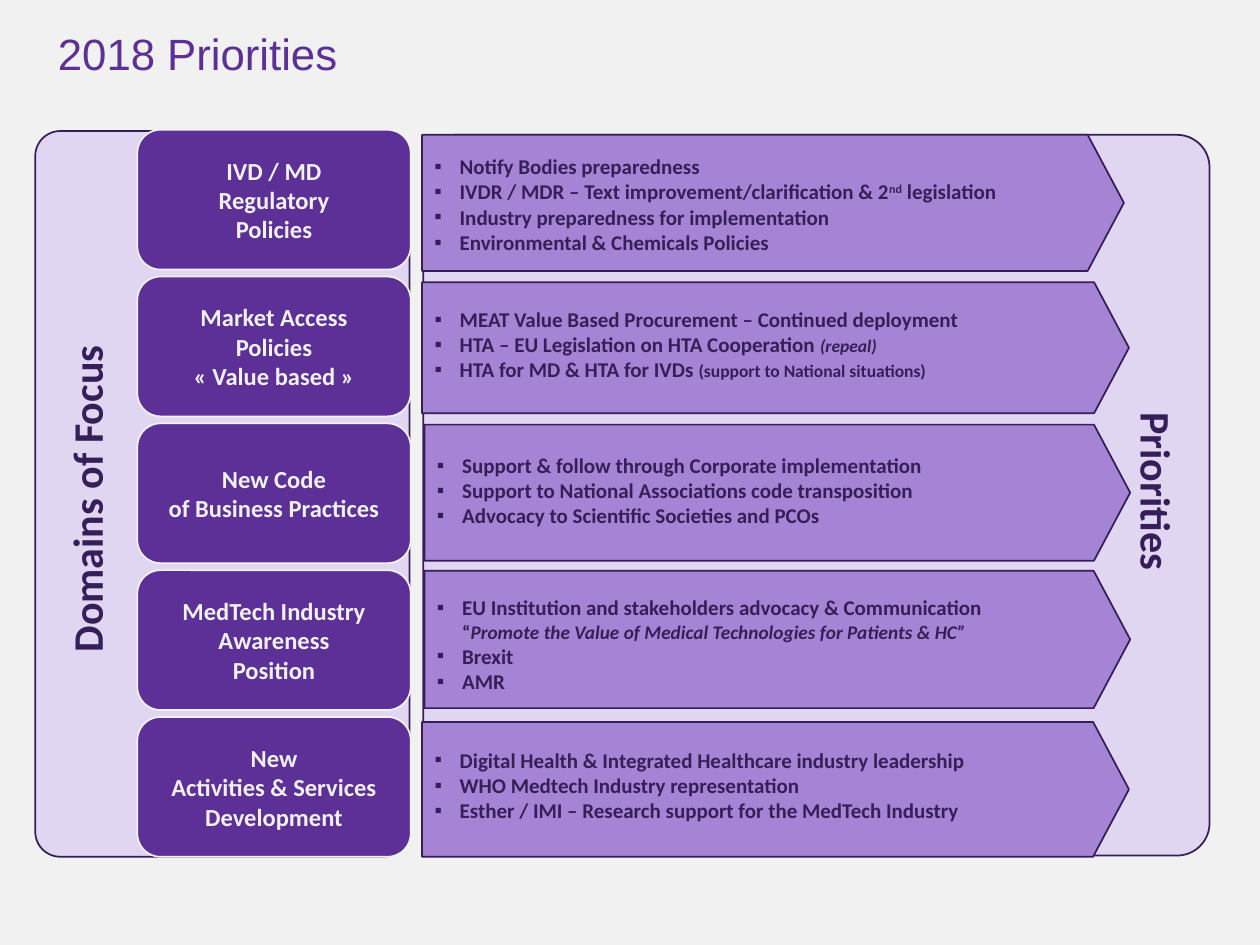
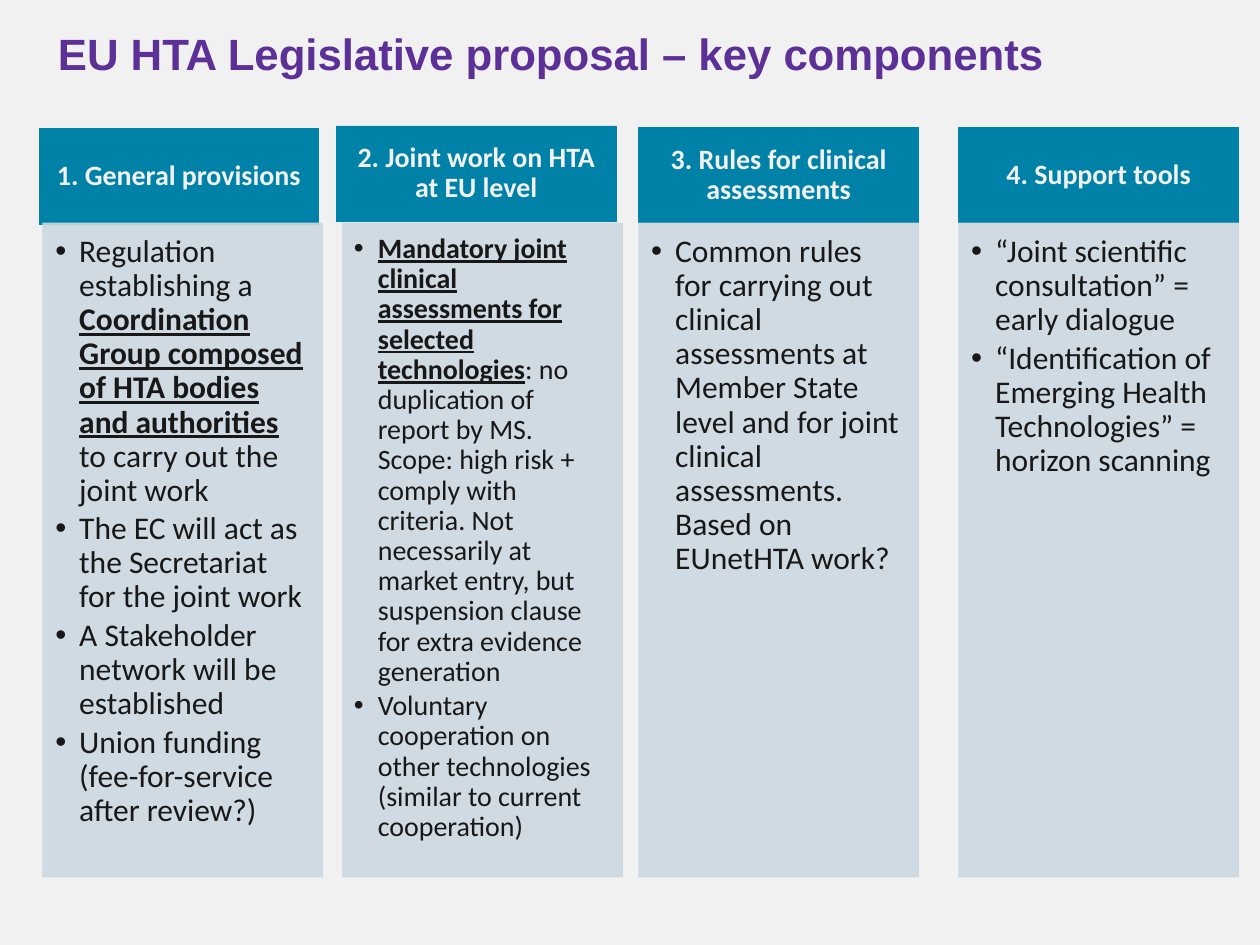
from pptx import Presentation
from pptx.util import Inches, Pt
from pptx.dml.color import RGBColor as RGB
from pptx.enum.shapes import MSO_SHAPE as Form
from pptx.enum.text import PP_ALIGN as Align, MSO_ANCHOR as Anchor
from lxml.etree import SubElement as Sub
from pptx.oxml.ns import qn

HUE = {"back": "F1F1F1", "plum": "5C3096", "dark": "361E58", "pale": "E1D6F1",
       "lilac": "A684D5", "teal": "0082A8", "mist": "CCD8E1", "ink": "181818"}


def draw(slide, form, place, fill, line, width, adj=None):
    """Add a flat preset shape."""
    shape = slide.shapes.add_shape(form, *[Inches(v) for v in place])
    shape.shadow.inherit = False
    shape.fill.solid()
    shape.fill.fore_color.rgb = RGB.from_string(HUE[fill])
    shape.line.color.rgb = RGB.from_string(HUE[line])
    shape.line.width = Pt(width)
    if adj is not None:
        shape.adjustments[0] = adj
    return shape


def write(shape, lines, size, hue, font="Calibri", bold=False, align=Align.LEFT,
          anchor=Anchor.TOP, pads=(0.1, 0.05, 0.1, 0.05), space=1.0, after=0,
          mark=None, hang=0):
    """Fill a shape with lines; a run is text or (text, size, style letters).

    Styles: b bold, i italic, u underline, s superscript, n line without bullet.
    """
    frame = shape.text_frame
    frame.word_wrap = True
    frame.vertical_anchor = anchor
    (frame.margin_left, frame.margin_top,
     frame.margin_right, frame.margin_bottom) = [Inches(v) for v in pads]
    for i, line in enumerate(lines):
        para = frame.add_paragraph() if i else frame.paragraphs[0]
        runs = [line] if isinstance(line, str) else line
        runs = [(r, size, "") if isinstance(r, str) else r for r in runs]
        if mark:
            props = para._p.get_or_add_pPr()
            props.set("marL", str(Inches(hang)))
            if "n" in runs[0][2]:
                props.set("indent", "0")
                Sub(props, qn("a:buNone"))
            else:
                props.set("indent", str(-Inches(hang)))
                Sub(props, qn("a:buFont")).set("typeface", "Arial")
                Sub(props, qn("a:buChar")).set("char", mark)
        para.alignment = align
        para.line_spacing = space
        para.space_before = Pt(0)
        para.space_after = Pt(after)
        for text, pts, style in runs:
            run = para.add_run()
            run.text = text
            run.font.name = font
            run.font.size = Pt(pts)
            run.font.color.rgb = RGB.from_string(HUE[hue])
            run.font.bold = bold or "b" in style
            run.font.italic = "i" in style
            run.font.underline = "u" in style
            if "s" in style:
                run._r.get_or_add_rPr().set("baseline", "30000")


# Shared page setup and titles
deck = Presentation()
deck.slide_width, deck.slide_height = Inches(10), Inches(7.5)
back = deck.slide_master.background.fill
back.solid()
back.fore_color.rgb = RGB.from_string(HUE["back"])

pages = []
for text, width, bold in [("2018 Priorities", 7.5, False),
                          ("EU HTA Legislative proposal – key components", 8.92, True)]:
    page = deck.slides.add_slide(deck.slide_layouts[5])
    title = page.shapes.title
    title.left, title.top = Inches(0.36), Inches(0.21)
    title.width, title.height = Inches(width), Inches(0.55)
    write(title, [text], 25, "plum", font="Arial", bold=bold, space=0.9)
    pages.append(page)
first, second = pages

# Slide 1: panels behind the rows
draw(first, Form.ROUNDED_RECTANGLE, (3.36, 1.07, 6.24, 5.72), "pale", "dark", 1, 0.045)
draw(first, Form.ROUNDED_RECTANGLE, (0.28, 1.04, 2.97, 5.76), "pale", "dark", 1, 0.067)

# Domain, arrow place, top margin of the arrow, priorities
rows = [
    (["IVD / MD", "Regulatory", "Policies"], (3.35, 1.07, 5.57, 1.08), 0.15,
     ["Notify Bodies preparedness",
      ["IVDR / MDR – Text improvement/clarification & 2", ("nd", 12, "s"), " legislation"],
      "Industry preparedness for implementation",
      "Environmental & Chemicals Policies"]),
    (["Market Access", "Policies", "« Value based »"], (3.35, 2.24, 5.61, 1.04), 0.19,
     ["MEAT Value Based Procurement – Continued deployment",
      ["HTA – EU Legislation on HTA Cooperation ", ("(repeal)", 10, "i")],
      ["HTA for MD & HTA for IVDs ", ("(support to National situations)", 10, "")]]),
    (["New Code", "of Business Practices"], (3.37, 3.37, 5.6, 1.08), 0.22,
     ["Support & follow through Corporate implementation",
      "Support to National Associations code transposition",
      "Advocacy to Scientific Societies and PCOs"]),
    (["MedTech Industry", "Awareness", "Position"], (3.37, 4.53, 5.6, 1.09), 0.19,
     ["EU Institution and stakeholders advocacy & Communication",
      [("“", 11, "n"),
       ("Promote the Value of Medical Technologies for Patients & HC”", 11, "i")],
      "Brexit", "AMR"]),
    (["New", "Activities & Services", "Development"], (3.35, 5.73, 5.61, 1.07), 0.2,
     ["Digital Health & Integrated Healthcare industry leadership",
      "WHO Medtech Industry representation",
      "Esther / IMI – Research support for the MedTech Industry"]),
]
for i, (domain, place, top, goals) in enumerate(rows):
    box = draw(first, Form.ROUNDED_RECTANGLE, (1.09, 1.03 + i * 1.165, 2.17, 1.11),
               "plum", "back", 1)
    write(box, domain, 14, "back", bold=True, align=Align.CENTER,
          anchor=Anchor.MIDDLE, pads=(0.06, 0.03, 0.06, 0.03), space=Pt(16.8))
    arrow = draw(first, Form.PENTAGON, place, "lilac", "dark", 1, 0.266)
    write(arrow, goals, 12, "dark", bold=True, pads=(0.1, top, 0, 0.05),
          mark="▪", hang=0.2)

# Upright side labels
for text, left, top, turn in [("Domains of Focus", -1.33, 3.71, 270),
                              ("Priorities", 7.17, 3.65, 90)]:
    label = first.shapes.add_textbox(Inches(left), Inches(top), Inches(4.03), Inches(0.5))
    label.rotation = turn
    write(label, [text], 24, "dark", bold=True, align=Align.CENTER)

# Slide 2: header, its left and top, body left, text size, points
cols = [
    ("1. General provisions", 0.31, 1.02, 0.34, 18,
     [["Regulation establishing a ",
       ("Coordination Group composed of HTA bodies and authorities ", 18, "bu"),
       "to carry out the joint work"],
      "The EC will act as the Secretariat for the joint work",
      "A Stakeholder network will be established",
      "Union funding (fee-for-service after review?)"]),
    ("2. Joint work on HTA at EU level", 2.67, 1, 2.72, 16,
     [[("Mandatory joint clinical assessments for selected technologies", 16, "bu"),
       ": no duplication of report by MS. Scope: high risk + comply with criteria. "
       "Not necessarily at market entry, but suspension clause for extra evidence "
       "generation"],
      "Voluntary cooperation on other technologies (similar to current cooperation)"]),
    ("3. Rules for clinical assessments", 5.07, 1.01, 5.07, 18,
     ["Common rules for carrying out clinical assessments at Member State level and "
      "for joint clinical assessments. Based on EUnetHTA work?"]),
    ("4. Support tools", 7.61, 1.01, 7.61, 18,
     ["“Joint scientific consultation” = early dialogue",
      "“Identification of Emerging Health Technologies” = horizon scanning"]),
]
for name, left, top, inner, size, points in cols:
    head = draw(second, Form.RECTANGLE, (left, top, 2.22, 0.76), "teal", "teal", 0.5)
    write(head, [name], 16, "back", bold=True, align=Align.CENTER,
          anchor=Anchor.MIDDLE, pads=(0.12, 0.07, 0.12, 0.07), space=0.9)
    body = draw(second, Form.RECTANGLE, (inner, 1.77, 2.22, 5.19), "mist", "mist", 0.5)
    for tint in body._element.spPr.iter(qn("a:srgbClr")):
        Sub(tint, qn("a:alpha")).set("val", "90000")
    ratio = size / 18
    write(body, points, size, "ink",
          pads=[v * ratio for v in (0.1, 0.1, 0.14, 0.16)],
          space=0.9, after=size * 0.15, mark="•", hang=0.19)

deck.save("out.pptx")
